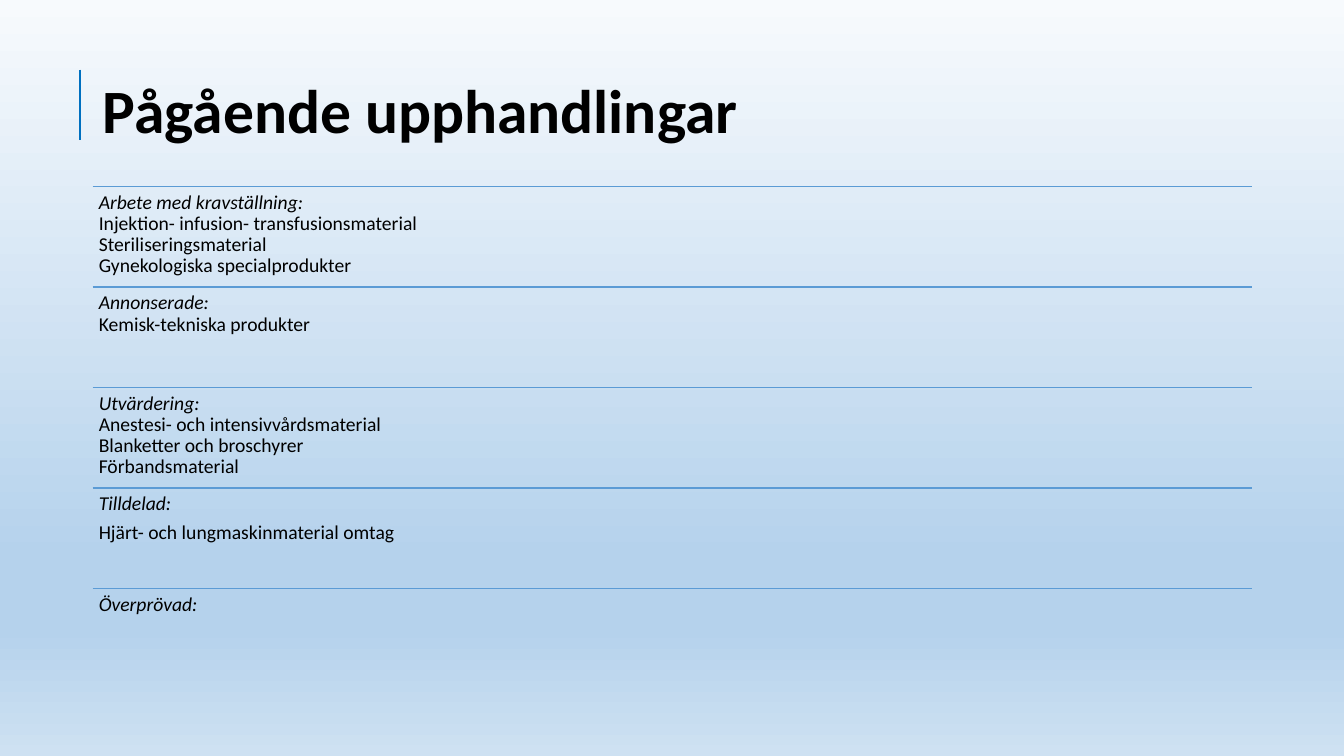
"""Build a slide listing ongoing procurements by stage."""
from copy import deepcopy
from dataclasses import dataclass

from pptx import Presentation
from pptx.dml.color import RGBColor
from pptx.enum.shapes import MSO_CONNECTOR
from pptx.enum.text import MSO_ANCHOR, MSO_AUTO_SIZE, PP_ALIGN
from pptx.oxml.ns import qn
from pptx.oxml.xmlchemy import OxmlElement
from pptx.util import Inches, Pt

TITLE = "Pågående upphandlingar"
STAGES = [
    ("Arbete med kravställning:", "line",
     ["Injektion- infusion- transfusionsmaterial", "Steriliseringsmaterial",
      "Gynekologiska specialprodukter"]),
    ("Annonserade:", "line", ["Kemisk-tekniska produkter"]),
    ("Utvärdering:", "line",
     ["Anestesi- och intensivvårdsmaterial", "Blanketter och broschyrer",
      "Förbandsmaterial"]),
    ("Tilldelad:", "paragraph", ["Hjärt- och lungmaskinmaterial omtag"]),
    ("Överprövad:", "line", []),
]


@dataclass(frozen=True)
class Theme:
    font: str = "Calibri"
    title_size: int = 44
    body_size: int = 14
    text: str = "000000"
    accent: str = "0070C0"
    rule: str = "5B9BD5"
    background: tuple = ((0, "F7FAFD"), (74, "B5D2EC"), (83, "B5D2EC"), (100, "CEE1F2"))


THEME = Theme()
WIDTH, HEIGHT = 13.33, 7.5
LEFT, CONTENT_WIDTH = 0.92, 11.5
TITLE_TOP, TITLE_HEIGHT = 0.4, 1.45
LIST_TOP = TITLE_TOP + TITLE_HEIGHT
ROW_HEIGHT = 0.997
ACCENT_LEFT, ACCENT_TOP, ACCENT_BOTTOM = 0.79, 0.69, 1.39
PADDING = 0.06


def apply_format(target, values):
    for name, value in values.items():
        setattr(target, name, value)


def format_font(run, size, **extra):
    apply_format(run.font, {"name": THEME.font, "size": Pt(size), **extra})
    run.font.color.rgb = RGBColor.from_string(THEME.text)


def paint_background(slide):
    fill = slide.background.fill
    fill.gradient()
    fill.gradient_angle = 270
    stop_list = slide.element.find(".//" + qn("a:gsLst"))
    pattern = deepcopy(stop_list[0])
    for stop in list(stop_list):
        stop_list.remove(stop)
    for position, color in THEME.background:
        stop = deepcopy(pattern)
        stop_list.append(stop)
        stop.set("pos", str(position * 1000))
        for child in list(stop):
            stop.remove(child)
        color_element = OxmlElement("a:srgbClr")
        color_element.set("val", color)
        stop.append(color_element)


def add_rule(slide, start, end, color, width):
    points = [Inches(value) for value in (*start, *end)]
    connector = slide.shapes.add_connector(MSO_CONNECTOR.STRAIGHT, *points)
    connector.line.color.rgb = RGBColor.from_string(color)
    connector.line.width = Pt(width)
    connector._element.spPr.append(OxmlElement("a:effectLst"))


def add_title(slide):
    title = slide.shapes.title
    apply_format(title, {"left": Inches(LEFT), "top": Inches(TITLE_TOP),
                         "width": Inches(CONTENT_WIDTH), "height": Inches(TITLE_HEIGHT)})
    apply_format(title.text_frame, {"text": TITLE, "word_wrap": True,
                                    "auto_size": MSO_AUTO_SIZE.NONE,
                                    "vertical_anchor": MSO_ANCHOR.MIDDLE})
    paragraph = title.text_frame.paragraphs[0]
    apply_format(paragraph, {"alignment": PP_ALIGN.LEFT, "line_spacing": 0.9})
    format_font(paragraph.runs[0], THEME.title_size, bold=True)


def add_stage(slide, top, heading, separator, items):
    add_rule(slide, (LEFT, top), (LEFT + CONTENT_WIDTH, top), THEME.rule, 1)
    box = slide.shapes.add_textbox(Inches(LEFT), Inches(top),
                                   Inches(CONTENT_WIDTH), Inches(ROW_HEIGHT))
    frame = box.text_frame
    margins = {f"margin_{side}": Inches(PADDING)
               for side in ("left", "top", "right", "bottom")}
    apply_format(frame, {"word_wrap": True, "vertical_anchor": MSO_ANCHOR.TOP, **margins})
    paragraph = frame.paragraphs[0]
    for index, line in enumerate([heading, *items]):
        if index and separator == "paragraph":
            paragraph = frame.add_paragraph()
        elif index:
            paragraph.add_line_break()
        run = paragraph.add_run()
        run.text = line
        format_font(run, THEME.body_size, italic=index == 0)
    for paragraph in frame.paragraphs:
        apply_format(paragraph, {"line_spacing": 0.9, "space_after": Pt(5)})


def main():
    presentation = Presentation()
    apply_format(presentation, {"slide_width": Inches(WIDTH), "slide_height": Inches(HEIGHT)})
    slide = presentation.slides.add_slide(presentation.slide_layouts[5])
    paint_background(slide)
    add_rule(slide, (ACCENT_LEFT, ACCENT_TOP), (ACCENT_LEFT, ACCENT_BOTTOM), THEME.accent, 1.5)
    add_title(slide)
    for row, stage in enumerate(STAGES):
        add_stage(slide, LIST_TOP + row * ROW_HEIGHT, *stage)
    presentation.save("out.pptx")


if __name__ == "__main__":
    main()
